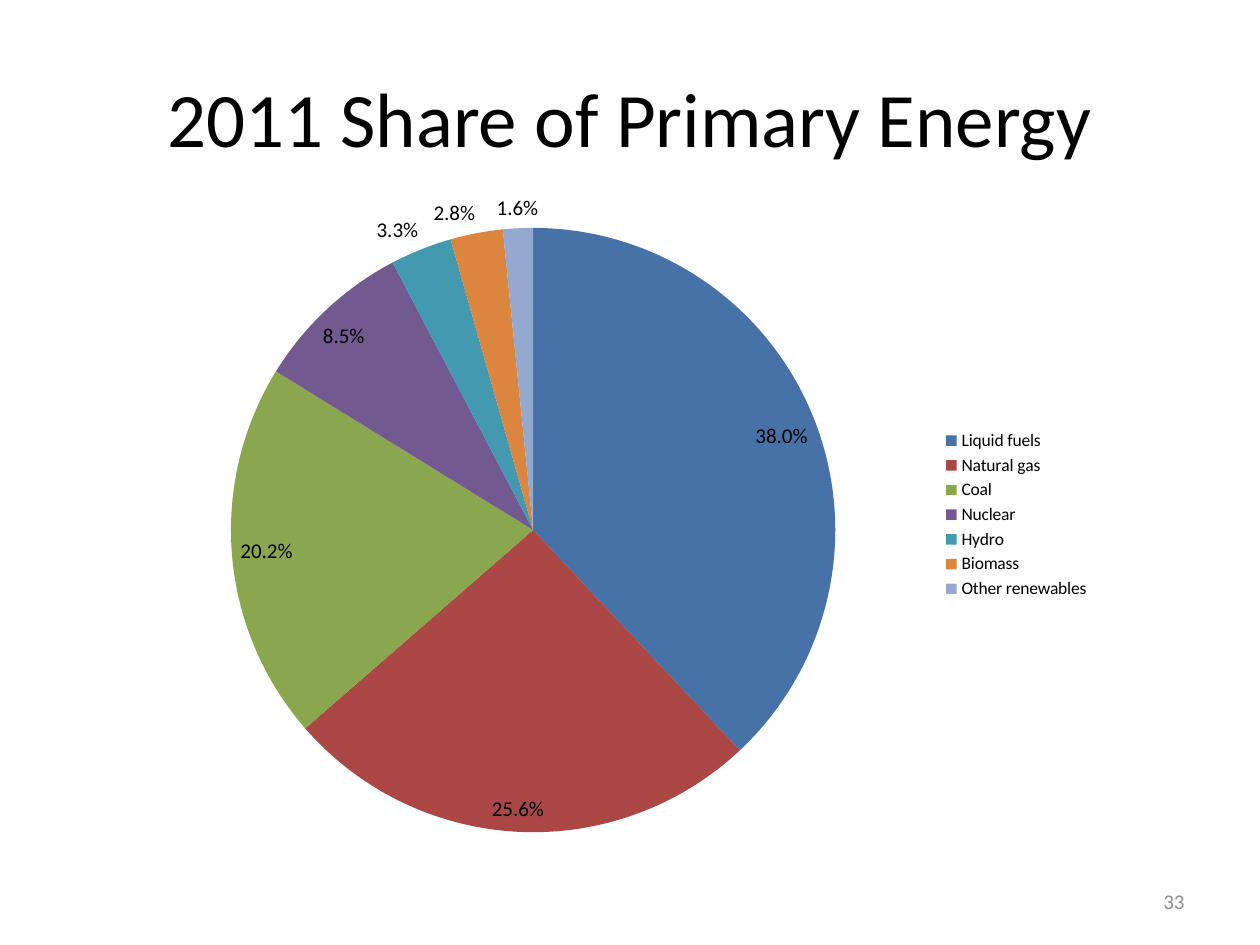
from lxml import etree
from pptx import Presentation
from pptx.chart.data import CategoryChartData
from pptx.dml.color import RGBColor
from pptx.enum import chart as ch, text
from pptx.oxml import ns
from pptx.util import Inches, Pt

FONT = "Calibri"
# Energy source, share of primary energy, slice colour
SHARES = [
    ("Liquid fuels", 0.38, "4672A8"),
    ("Natural gas", 0.256, "AB4744"),
    ("Coal", 0.202, "8AA64F"),
    ("Nuclear", 0.085, "725990"),
    ("Hydro", 0.033, "4299B0"),
    ("Biomass", 0.028, "DC853E"),
    ("Other renewables", 0.016, "93A9CF"),
]


def color(hex_value):
    return RGBColor.from_string(hex_value)


def style_font(font, size, hex_value):
    font.name = FONT
    font.size = Pt(size)
    font.color.rgb = color(hex_value)


def add_text(slide, box, words, size, hex_value, align):
    frame = slide.shapes.add_textbox(*map(Inches, box)).text_frame
    frame.word_wrap = True
    frame.vertical_anchor = text.MSO_ANCHOR.MIDDLE
    paragraph = frame.paragraphs[0]
    paragraph.text = words
    paragraph.alignment = align
    style_font(paragraph.font, size, hex_value)


def place_plot(chart, **fractions):
    """Fix the inner plot area, in fractions of the chart frame."""
    plot_area = chart.plots[0]._element.getparent()
    for old in plot_area.findall(ns.qn("c:layout")):
        plot_area.remove(old)
    layout = etree.Element(ns.qn("c:layout"))
    manual = etree.SubElement(layout, ns.qn("c:manualLayout"))
    settings = {"layoutTarget": "inner", "xMode": "edge", "yMode": "edge", **fractions}
    for tag, value in settings.items():
        etree.SubElement(manual, ns.qn(f"c:{tag}")).set("val", str(value))
    plot_area.insert(0, layout)


def add_share_pie(slide, box):
    names, values, fills = zip(*SHARES)
    data = CategoryChartData(number_format="0.0%")
    data.categories = names
    data.add_series("Series 1", values)
    chart = slide.shapes.add_chart(
        ch.XL_CHART_TYPE.PIE, *map(Inches, box), data
    ).chart
    style_font(chart.font, 10, "000000")
    chart.has_title = False

    # Legend beside the pie
    chart.has_legend = True
    chart.legend.position = ch.XL_LEGEND_POSITION.RIGHT
    chart.legend.include_in_layout = False

    # Slices and their labels
    pie = chart.plots[0]
    pie.vary_by_categories = True
    for index, hex_value in enumerate(fills):
        fill = pie.series[0].points[index].format.fill
        fill.solid()
        fill.fore_color.rgb = color(hex_value)
    labels = pie.series[0].data_labels
    labels.show_value = True
    labels.show_percentage = False
    labels.number_format = "0.0%"
    labels.number_format_is_linked = False
    labels.position = ch.XL_LABEL_POSITION.BEST_FIT
    style_font(labels.font, 12, "000000")
    place_plot(chart, x=0.107, y=0.073, w=0.62, h=0.9)


def main():
    deck = Presentation()
    deck.slide_width, deck.slide_height = Inches(10), Inches(7.5)
    slide = deck.slides.add_slide(deck.slide_layouts[6])

    # Title
    add_text(slide, (0.5, 0.3, 9, 1.25), "2011 Share of Primary Energy",
             44, "000000", text.PP_ALIGN.CENTER)
    # Slide number
    add_text(slide, (7.17, 6.95, 2.33, 0.4), "33",
             12, "8C8C8C", text.PP_ALIGN.RIGHT)
    # Energy shares
    add_share_pie(slide, (1, 1.42, 7.75, 5.33))

    deck.save("out.pptx")


if __name__ == "__main__":
    main()
